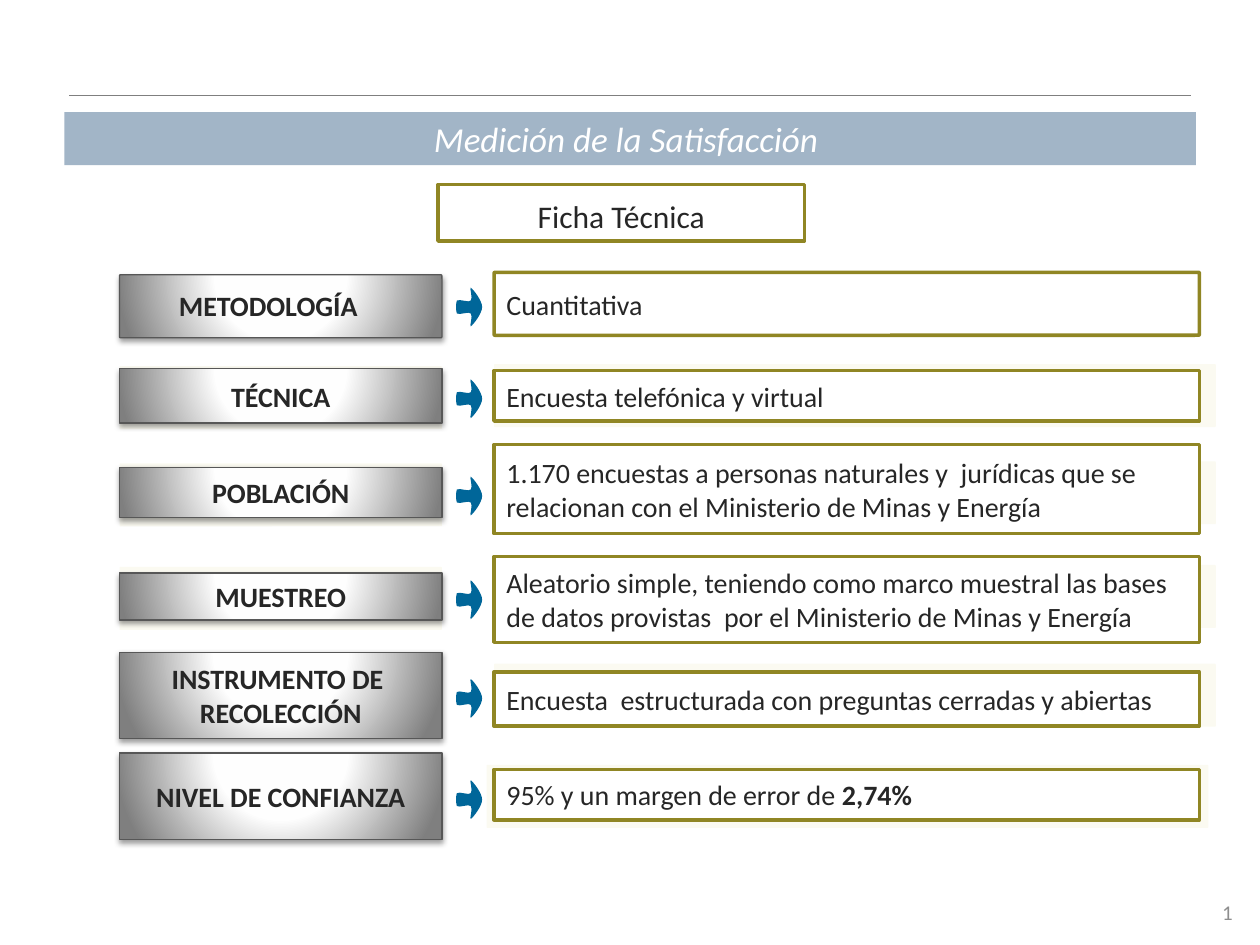
from dataclasses import dataclass

from lxml.etree import SubElement
from pptx import Presentation
from pptx.dml.color import RGBColor
from pptx.enum.shapes import MSO_CONNECTOR, MSO_SHAPE
from pptx.enum.text import MSO_ANCHOR, MSO_AUTO_SIZE, PP_ALIGN
from pptx.oxml import parse_xml
from pptx.oxml.ns import nsdecls, qn
from pptx.util import Cm, Pt


@dataclass(frozen=True)
class Theme:
    font: str = "Calibri"
    banner: str = "A2B5C7"
    white: str = "FFFFFF"
    ink: str = "262626"
    olive: str = "908624"
    glow: str = "DED577"
    arrow: str = "006699"
    label_border: str = "575757"
    rule: str = "7F7F7F"
    number: str = "8E8E8E"
    title_size: int = 20
    subtitle_size: int = 18
    body_size: int = 16
    number_size: int = 12


THEME = Theme()

LABEL_LEFT, LABEL_WIDTH = 2.41, 6.5
ANSWER_LEFT, ANSWER_WIDTH = 9.96, 14.22
GLOW_WIDTH, GLOW_HEIGHT = 14.55, 1.27
ARROW_LEFT = 9.21

# label, answer runs, band top, label top and height, answer top and height
ROWS = [
    ("METODOLOGÍA", ["Cuantitativa"], 5.49, 5.54, 1.27, 5.49, 1.27),
    ("TÉCNICA", ["Encuesta telefónica y virtual"], 7.34, 7.43, 1.1, 7.47, 1.02),
    ("POBLACIÓN", ["1.170 encuestas a personas naturales y  jurídicas que se "
                   "relacionan con el Ministerio de Minas y Energía"],
     9.3, 9.42, 1.02, 8.96, 1.8),
    ("MUESTREO", ["Aleatorio simple, teniendo como marco muestral las bases "
                  "de datos provistas  por el Ministerio de Minas y Energía"],
     11.39, 11.55, 0.95, 11.22, 1.73),
    ("INSTRUMENTO DE  RECOLECCIÓN",
     ["Encuesta  estructurada con preguntas cerradas y abiertas"],
     13.38, 13.15, 1.74, 13.55, 1.09),
    ("NIVEL DE CONFIANZA", ["95% y un margen de error de ", "2,74%"],
     15.42, 15.18, 1.74, 15.51, 1.02),
]

# Lower half of the arrow, in cm from its left end and its axis: the start,
# then two control points and an end point for each curve
ARROW_HALF = [
    (0, 0.13),
    (0.05, 0.17), (0.25, 0.08), (0.28, 0.13),
    (0.33, 0.17), (0.25, 0.4), (0.28, 0.39),
    (0.33, 0.36), (0.51, 0.13), (0.51, 0),
]
ARROW_TAIL = [(-0.02, -0.08), (-0.02, 0.08), ARROW_HALF[0]]


def write(shape, *texts, size=THEME.body_size, color=THEME.ink, bold=False,
          italic=False, align=PP_ALIGN.LEFT, margins=(0.25, 0.13, 0.25, 0.13)):
    """Write one paragraph; runs after the first are bold. Margins: l, t, r, b."""
    frame = shape.text_frame
    frame.word_wrap = True
    frame.auto_size = MSO_AUTO_SIZE.NONE
    frame.vertical_anchor = MSO_ANCHOR.MIDDLE
    (frame.margin_left, frame.margin_top,
     frame.margin_right, frame.margin_bottom) = map(Cm, margins)
    paragraph = frame.paragraphs[0]
    paragraph.alignment = align
    paragraph.space_before = Pt(0)
    for index, text in enumerate(texts):
        run = paragraph.add_run()
        run.text = text
        run.font.name = THEME.font
        run.font.size = Pt(size)
        run.font.bold = bold or index > 0
        run.font.italic = italic
        run.font.color.rgb = RGBColor.from_string(color)
    return paragraph


def place(shape, left, top, width, height):
    shape.left, shape.top, shape.width, shape.height = map(
        Cm, (left, top, width, height))


def paint(shape, fill, border=None, weight=2.0):
    shape.fill.solid()
    shape.fill.fore_color.rgb = RGBColor.from_string(fill)
    if border:
        shape.line.color.rgb = RGBColor.from_string(border)
        shape.line.width = Pt(weight)
    else:
        shape.line.fill.background()


def add_box(slide, left, top, width, height, fill, rounded=False, **border):
    kind = MSO_SHAPE.ROUNDED_RECTANGLE if rounded else MSO_SHAPE.RECTANGLE
    shape = slide.shapes.add_shape(kind, *map(Cm, (left, top, width, height)))
    if rounded:
        shape.adjustments[0] = 0.016
    shape.shadow.inherit = False
    paint(shape, fill, **border)
    return shape


def add_text_box(slide, left, top, width, height):
    return slide.shapes.add_textbox(*map(Cm, (left, top, width, height)))


def add_glow(slide, left, top, width):
    """Add a pale band that is ten per cent opaque."""
    band = add_box(slide, left, top, width, GLOW_HEIGHT, THEME.glow, rounded=True)
    color = band._element.spPr.find(f".//{qn('a:srgbClr')}")
    SubElement(color, qn("a:alpha"), val="10000")


def add_label(slide, top, height, rounded):
    """Add a metallic label with a radial gradient and a soft shadow."""
    label = add_box(slide, LABEL_LEFT, top, LABEL_WIDTH, height, THEME.white,
                    rounded, border=THEME.label_border, weight=0.75)
    properties = label._element.spPr
    gradient = parse_xml(
        f'<a:gradFill {nsdecls("a")} rotWithShape="1"><a:gsLst>'
        '<a:gs pos="0"><a:srgbClr val="FFFFFF"/></a:gs>'
        '<a:gs pos="40000"><a:srgbClr val="FEFEFE"/></a:gs>'
        '<a:gs pos="100000"><a:srgbClr val="7F7F7F"/></a:gs></a:gsLst>'
        '<a:path path="circle"><a:fillToRect l="50000" t="-80000" '
        'r="50000" b="180000"/></a:path></a:gradFill>')
    properties.replace(properties.find(qn("a:solidFill")), gradient)
    properties.find(qn("a:effectLst")).append(parse_xml(
        f'<a:outerShdw {nsdecls("a")} blurRad="40000" dist="20000" '
        'dir="5400000" rotWithShape="0"><a:srgbClr val="000000">'
        '<a:alpha val="38000"/></a:srgbClr></a:outerShdw>'))
    return label


def bend_segments(shape):
    """Turn each three line segments of a freeform into one cubic curve."""
    segments = list(shape._element.iter(qn("a:lnTo")))
    for index in range(0, len(segments), 3):
        group = segments[index:index + 3]
        curve = parse_xml(f'<a:cubicBezTo {nsdecls("a")}/>')
        group[0].addprevious(curve)
        for segment in group:
            curve.extend(list(segment))
            segment.getparent().remove(segment)


def add_arrow(slide, center):
    mirrored = [(x, -y) for x, y in reversed(ARROW_HALF[:-1])]
    points = [(Cm(ARROW_LEFT + x), Cm(center + y))
              for x, y in [*ARROW_HALF, *mirrored, *ARROW_TAIL]]
    builder = slide.shapes.build_freeform(*points[0])
    builder.add_line_segments(points[1:], close=True)
    arrow = builder.convert_to_shape()
    bend_segments(arrow)
    arrow.shadow.inherit = False
    paint(arrow, THEME.arrow)


def add_row(slide, row):
    text, answer, band_top, label_top, label_height, answer_top, answer_height = row
    first, last = row is ROWS[0], row is ROWS[-1]
    if not first:
        add_glow(slide, LABEL_LEFT, band_top + 0.04, LABEL_WIDTH)
        add_glow(slide, ANSWER_LEFT - (0.15 if last else 0), band_top, GLOW_WIDTH)
    add_arrow(slide, band_top + 0.7)
    label = add_label(slide, label_top, label_height, first)
    box = add_box(slide, ANSWER_LEFT, answer_top, ANSWER_WIDTH, answer_height,
                  THEME.white, first, border=THEME.olive)
    if first:
        label = add_text_box(slide, 1.91, 5.64, 7, 1.02)
        box = add_text_box(slide, ANSWER_LEFT, 5.66, ANSWER_WIDTH, 0.94)
    write(label, text, bold=True, align=PP_ALIGN.CENTER)
    write(box, *answer)


def add_headings(slide):
    title, subtitle = slide.shapes.title, slide.placeholders[1]
    place(title, 1.3, 2.26, 22.81, 1.07)
    paint(title, THEME.banner)
    write(title, "Medición de la Satisfacción", size=THEME.title_size,
          color=THEME.white, italic=True, align=PP_ALIGN.CENTER,
          margins=(1, 0, 1.17, 0))
    place(subtitle, 8.83, 3.72, 7.39, 1.14)
    paint(subtitle, THEME.white, border=THEME.olive)
    paragraph = write(subtitle, "Ficha Técnica", size=THEME.subtitle_size,
                      align=PP_ALIGN.CENTER, margins=(0.25, 0.13, 0.25, 0))
    properties = paragraph._p.get_or_add_pPr()
    properties.set("marL", "0")
    properties.set("indent", "0")
    SubElement(properties, qn("a:buNone"))


def add_rule(slide):
    rule = slide.shapes.add_connector(
        MSO_CONNECTOR.STRAIGHT, Cm(1.4), Cm(1.93), Cm(24), Cm(1.93))
    rule.line.color.rgb = RGBColor.from_string(THEME.rule)
    rule.line.width = Pt(0.75)
    SubElement(rule._element.spPr, qn("a:effectLst"))


def add_slide_number(slide):
    box = add_text_box(slide, 23.5, 17.88, 1.6, 1.02)
    write(box, "1", size=THEME.number_size, color=THEME.number,
          align=PP_ALIGN.RIGHT)


def main():
    presentation = Presentation()
    presentation.slide_width, presentation.slide_height = Cm(25.4), Cm(19.05)
    slide = presentation.slides.add_slide(presentation.slide_layouts[1])
    add_slide_number(slide)
    add_rule(slide)
    add_headings(slide)
    for row in ROWS:
        add_row(slide, row)
    presentation.save("out.pptx")


if __name__ == "__main__":
    main()
